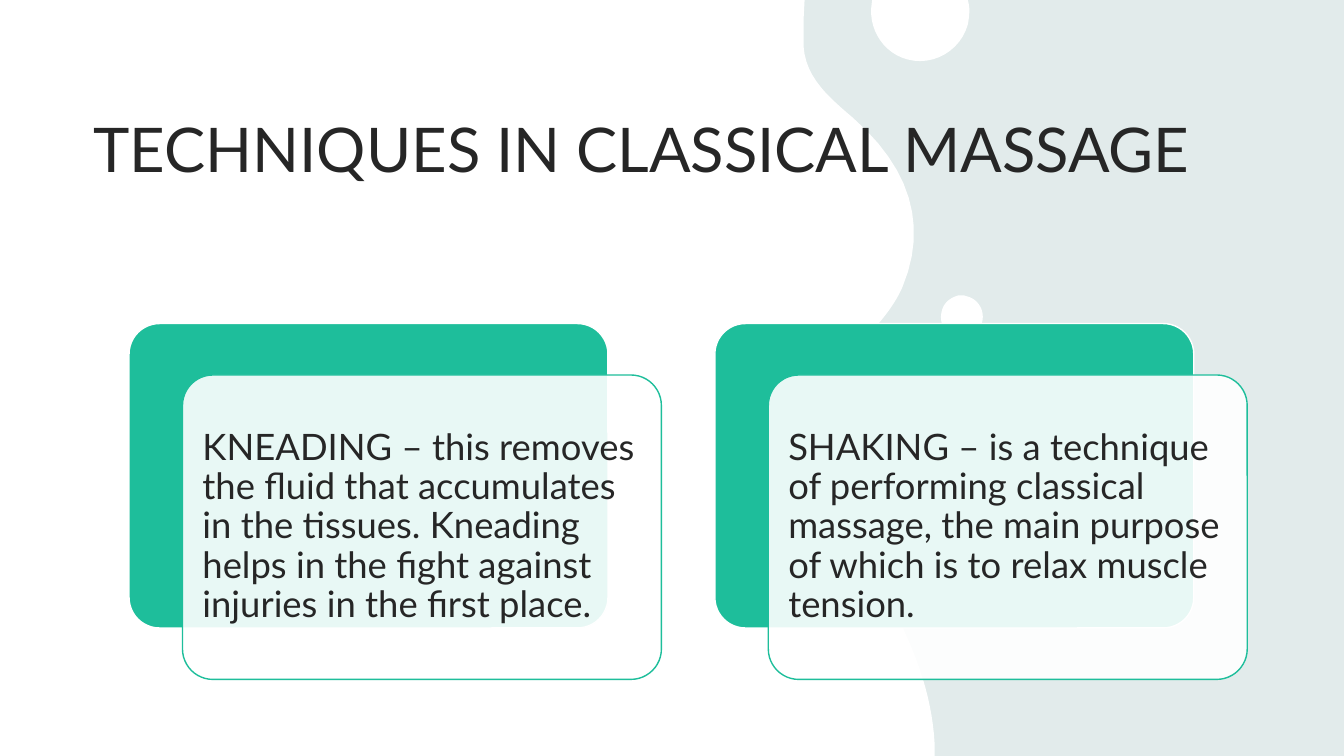
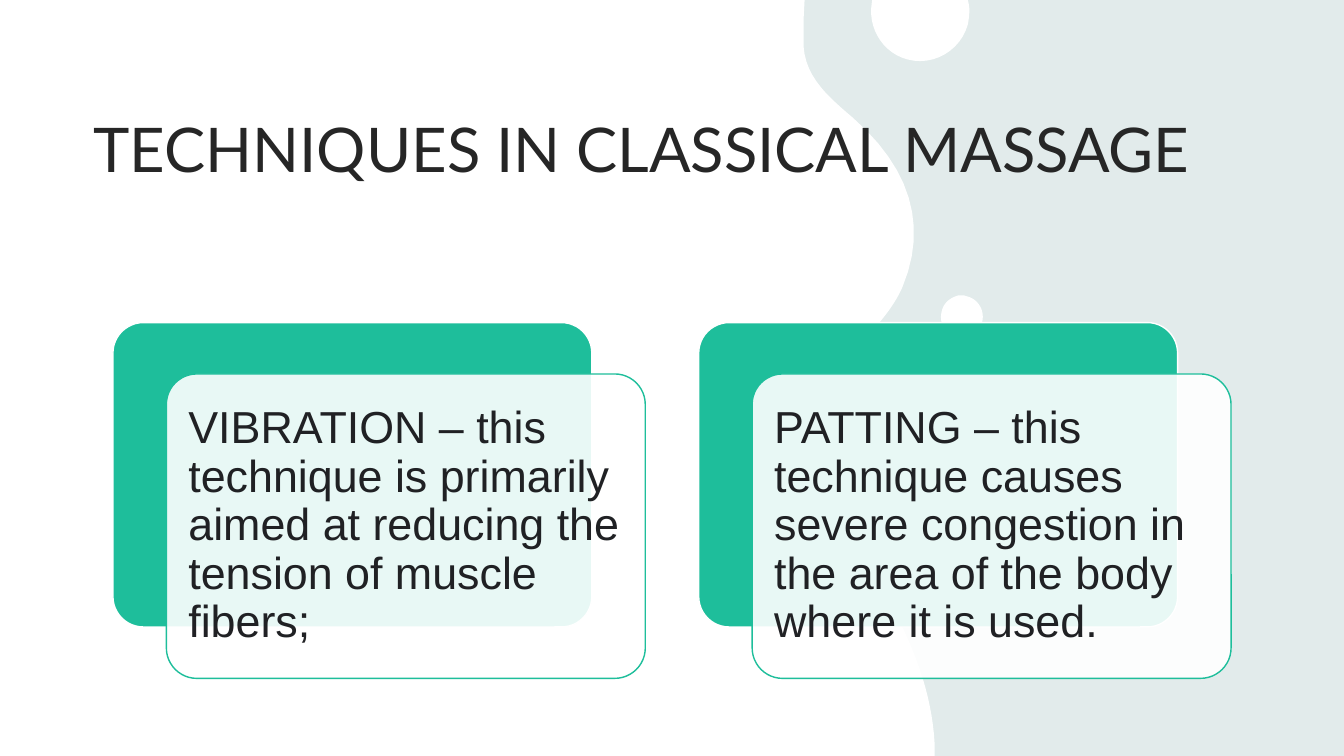
from dataclasses import dataclass
from typing import Any, NamedTuple

from lxml.etree import SubElement
from pptx import Presentation
from pptx.dml.color import RGBColor
from pptx.enum.shapes import MSO_SHAPE
from pptx.enum.text import MSO_ANCHOR, MSO_AUTO_SIZE, PP_ALIGN
from pptx.oxml.ns import qn
from pptx.util import Emu, Pt

PX = 9144  # EMU per px, 100 px to the inch
CURVE_STEPS = 12


@dataclass(frozen=True)
class Theme:
    background: str = "E9F3F3"
    veil: str = "AEAEAE"
    white: str = "FFFFFF"
    accent: str = "1EBE9B"
    ink: str = "262626"
    dark_ink: str = "202124"
    veil_opacity: int = 10
    panel_opacity: int = 90
    title_font: str = "Lato"
    title_size: int = 44
    line_width: int = 1


class Box(NamedTuple):
    left: int
    top: int
    width: int
    height: int

    def moved(self, right: int, down: int) -> "Box":
        return self._replace(left=self.left + right, top=self.top + down)

    def emu(self) -> list[Emu]:
        return [Emu(length * PX) for length in self]


class TextStyle(NamedTuple):
    font: str
    size: int
    color: str
    inset: int


class Contour(NamedTuple):
    start: tuple[int, int]
    # Two numbers make a line, six make a cubic curve
    steps: list[tuple[int, ...]]


class PageContent(NamedTuple):
    first_card: Box
    style: TextStyle
    texts: list[str]


THEME = Theme()
PAGE = Box(0, 0, 1333, 750)
TITLE = "TECHNIQUES IN CLASSICAL MASSAGE"
TITLE_BOX = Box(83, 105, 1204, 84)
CARD_PITCH = 581
PANEL_SHIFT = (53, 51)
CORNER = 0.1

# White wave on the left, with a spot in the middle and one cut by the top edge
WAVE = [
    Contour((0, 0), [
        (798, 0), (797, 20),
        (797, 29, 797, 38, 797, 46),
        (799, 78, 824, 98, 846, 117),
        (902, 166, 921, 223, 895, 285),
        (885, 308, 865, 329, 846, 348),
        (796, 398, 798, 457, 829, 510),
        (851, 548, 877, 584, 896, 624),
        (914, 662, 925, 700, 927, 738),
        (927, 750), (0, 750),
    ]),
    Contour((955, 293), [
        (957, 293, 958, 294, 959, 294),
        (971, 297, 977, 309, 974, 320),
        (971, 331, 960, 338, 949, 335),
        (937, 332, 931, 320, 934, 309),
        (936, 300, 943, 295, 951, 293),
    ]),
    Contour((960, 0), [
        (961, 5),
        (962, 11, 961, 18, 960, 24),
        (953, 50, 926, 66, 900, 59),
        (877, 53, 863, 31, 864, 9),
        (865, 0),
    ]),
]

CONTENT = [
    PageContent(
        Box(128, 321, 475, 302),
        TextStyle("Lato", 26, THEME.ink, 11),
        [
            "KNEADING – this removes the fluid that accumulates in the tissues. "
            "Kneading helps in the fight against injuries in the first place.",
            "SHAKING – is a technique of performing classical massage, "
            "the main purpose of which is to relax muscle tension.",
        ],
    ),
    PageContent(
        Box(112, 320, 475, 302),
        TextStyle("Arial", 32, THEME.dark_ink, 13),
        [
            "VIBRATION – this technique is primarily aimed at reducing "
            "the tension of muscle fibers;",
            "PATTING – this technique causes severe congestion in the area "
            "of the body where it is used.",
        ],
    ),
]


def apply(target: Any, values: dict[str, Any]) -> None:
    for name, value in values.items():
        setattr(target, name, value)


def paint(shape: Any, fill: str, line: str | None = None,
          opacity: int = 100) -> None:
    shape.shadow.inherit = False
    shape.fill.solid()
    shape.fill.fore_color.rgb = RGBColor.from_string(fill)
    if opacity < 100:
        color = shape.element.spPr.find(qn("a:solidFill")).find(qn("a:srgbClr"))
        SubElement(color, qn("a:alpha"), val=str(opacity * 1000))
    if line is None:
        shape.line.fill.background()
    else:
        shape.line.color.rgb = RGBColor.from_string(line)
        shape.line.width = Pt(THEME.line_width)


def add_shape(page: Any, kind: MSO_SHAPE, box: Box, fill: str,
              line: str | None = None, opacity: int = 100) -> Any:
    shape = page.shapes.add_shape(kind, *box.emu())
    paint(shape, fill, line, opacity)
    return shape


def write(shape: Any, text: str, style: TextStyle,
          frame_values: dict[str, Any], spacing: float = 1.0) -> None:
    frame = shape.text_frame
    apply(frame, {"word_wrap": True, **frame_values})
    para = frame.paragraphs[0]
    apply(para, {"alignment": PP_ALIGN.LEFT, "line_spacing": spacing})
    span = para.add_run()
    span.text = text
    apply(span.font, {"name": style.font, "size": Pt(style.size)})
    span.font.color.rgb = RGBColor.from_string(style.color)


def flatten(contour: Contour) -> list[tuple[float, float]]:
    """Turn lines and cubic curves into points, in EMU."""
    points: list[tuple[float, float]] = [contour.start]
    for step in contour.steps:
        if len(step) == 2:
            points.append(step)
            continue
        corners = [points[-1], step[0:2], step[2:4], step[4:6]]
        for index in range(1, CURVE_STEPS + 1):
            t = index / CURVE_STEPS
            weights = ((1 - t) ** 3, 3 * t * (1 - t) ** 2,
                       3 * t ** 2 * (1 - t), t ** 3)
            x, y = (sum(w * corner[axis] for w, corner in zip(weights, corners))
                    for axis in (0, 1))
            points.append((x, y))
    return [(x * PX, y * PX) for x, y in points]


def draw_backdrop(page: Any) -> None:
    page.background.fill.solid()
    page.background.fill.fore_color.rgb = RGBColor.from_string(THEME.background)
    add_shape(page, MSO_SHAPE.RECTANGLE, PAGE, THEME.veil,
              opacity=THEME.veil_opacity)
    builder = page.shapes.build_freeform(0, 0)
    for contour in WAVE:
        start, *points = flatten(contour)
        if contour is not WAVE[0]:
            builder.move_to(*start)
        builder.add_line_segments(points, close=True)
    paint(builder.convert_to_shape(), THEME.white)


def draw_title(page: Any) -> None:
    title = page.shapes.add_textbox(*TITLE_BOX.emu())
    style = TextStyle(THEME.title_font, THEME.title_size, THEME.ink, 0)
    write(title, TITLE, style, {"auto_size": MSO_AUTO_SIZE.SHAPE_TO_FIT_TEXT})


def draw_card(page: Any, box: Box, text: str, style: TextStyle) -> None:
    back = add_shape(page, MSO_SHAPE.ROUNDED_RECTANGLE, box,
                     THEME.accent, THEME.white)
    panel = add_shape(page, MSO_SHAPE.ROUNDED_RECTANGLE, box.moved(*PANEL_SHIFT),
                      THEME.white, THEME.accent, THEME.panel_opacity)
    for shape in (back, panel):
        shape.adjustments[0] = CORNER
    sides = ("left", "top", "right", "bottom")
    insets = {f"margin_{side}": Emu(style.inset * PX) for side in sides}
    write(panel, text, style,
          {"vertical_anchor": MSO_ANCHOR.MIDDLE, **insets}, spacing=0.9)


def main() -> None:
    deck = Presentation()
    apply(deck, {"slide_width": Emu(PAGE.width * PX),
                 "slide_height": Emu(PAGE.height * PX)})
    blank = deck.slide_layouts[6]
    for content in CONTENT:
        page = deck.slides.add_slide(blank)
        draw_backdrop(page)
        # Cards stand side by side at one pitch
        for index, text in enumerate(content.texts):
            box = content.first_card.moved(index * CARD_PITCH, 0)
            draw_card(page, box, text, content.style)
        draw_title(page)
    deck.save("out.pptx")


if __name__ == "__main__":
    main()
